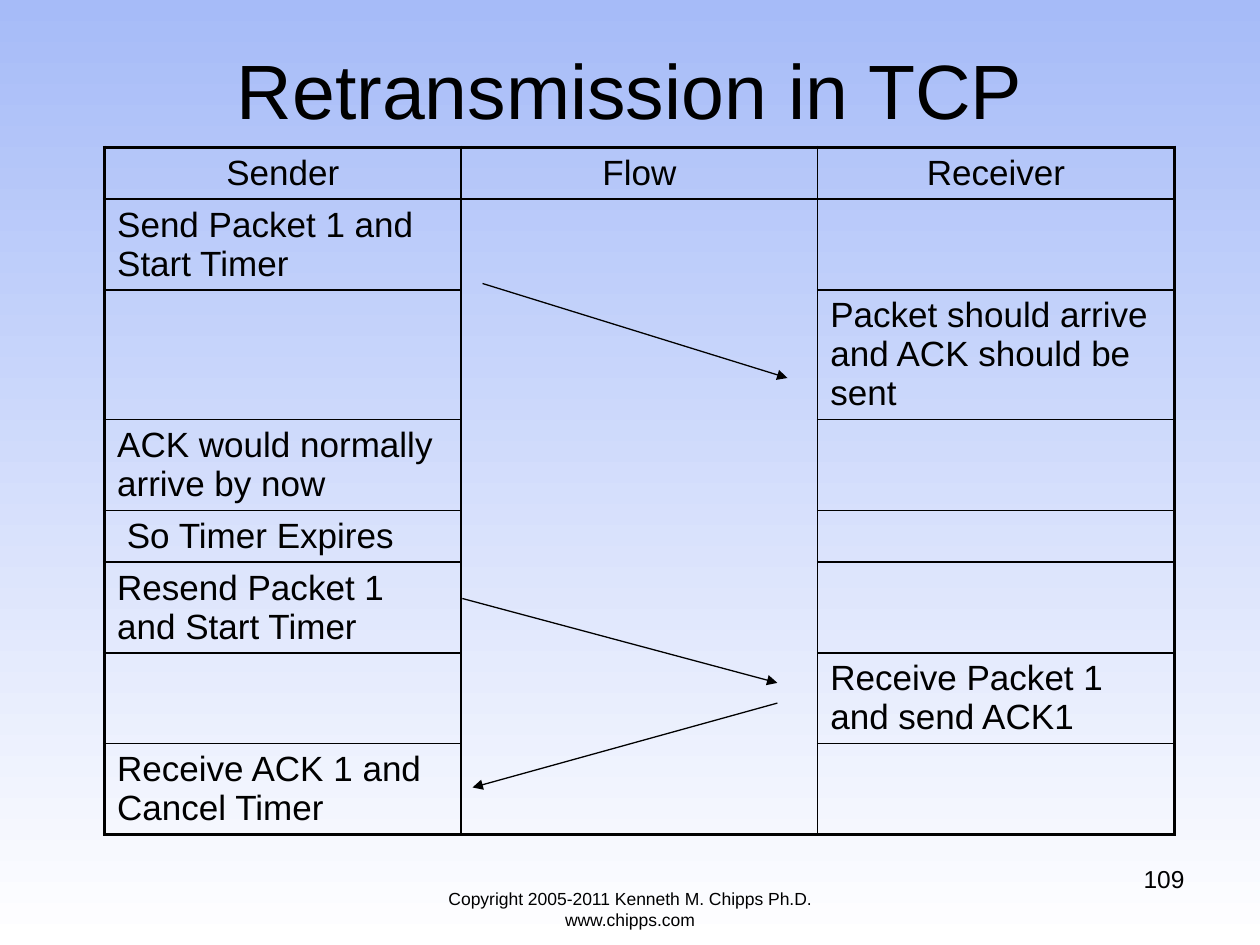
from pptx import Presentation
from pptx.dml.color import RGBColor
from pptx.enum.shapes import MSO_CONNECTOR as Connector
from pptx.enum.text import MSO_ANCHOR as Anchor, PP_ALIGN as Align
from pptx.oxml.ns import qn
from pptx.util import Inches, Pt
from lxml.etree import SubElement

BLACK = "000000"
THIN, THICK = 1, 2.25
COLUMN_WIDTH = 2.83
ROW_HEIGHTS = [0.41, 0.72, 1.03, 0.72, 0.41, 0.72, 0.72, 0.72]
ROWS = [
    ("Sender", "Flow", "Receiver"),
    ("Send Packet 1 and Start Timer", "", ""),
    ("", "", "Packet should arrive and ACK should be sent"),
    ("ACK would normally arrive by now", "", ""),
    (" So Timer Expires", "", ""),
    ("Resend Packet 1 and Start Timer", "", ""),
    ("", "", "Receive Packet 1 and send ACK1"),
    ("Receive ACK 1 and Cancel Timer", "", ""),
]
ARROWS = [  # start x, start y, end x, end y
    (3.67, 4.75, 6.17, 5.42),
    (6.17, 5.58, 3.75, 6.25),
    (3.83, 2.25, 6.25, 3),
]


def color(value):
    return RGBColor.from_string(value)


def write_text(frame, text, size, align):
    paragraph = frame.paragraphs[0]
    paragraph.alignment = align
    run = paragraph.add_run()
    run.text = text
    for name, value in {"name": "Arial", "size": Pt(size)}.items():
        setattr(run.font, name, value)
    run.font.color.rgb = color(BLACK)


def paint_background(slide):
    fill = slide.background.fill
    fill.gradient()
    fill.gradient_angle = 270
    for stop, value in zip(fill.gradient_stops, ("A6BBF8", "FFFFFF")):
        stop.color.rgb = color(value)


def set_title(slide, text):
    title = slide.shapes.title
    box = {"left": 0.5, "top": 0.08, "width": 9, "height": 1.25}
    for name, value in box.items():
        setattr(title, name, Inches(value))
    title.text_frame.vertical_anchor = Anchor.MIDDLE
    write_text(title.text_frame, text, 44, Align.CENTER)


def add_text(slide, box, text, size, align):
    frame = slide.shapes.add_textbox(*map(Inches, box)).text_frame
    frame.word_wrap = True
    write_text(frame, text, size, align)


def set_borders(cell, widths):
    properties = cell._tc.get_or_add_tcPr()
    for side, width in widths.items():
        line = SubElement(properties, qn(f"a:ln{side}"), w=str(Pt(width)))
        fill = SubElement(line, qn("a:solidFill"))
        SubElement(fill, qn("a:srgbClr"), val=BLACK)


def add_flow_table(slide):
    row_count, column_count = len(ROWS), len(ROWS[0])
    frame = slide.shapes.add_table(
        row_count, column_count, Inches(0.83), Inches(1.17),
        Inches(COLUMN_WIDTH * column_count), Inches(sum(ROW_HEIGHTS)))
    table = frame.table
    table.first_row = table.horz_banding = False
    for column in table.columns:
        column.width = Inches(COLUMN_WIDTH)
    for row, height in zip(table.rows, ROW_HEIGHTS):
        row.height = Inches(height)

    # The flow column is one tall cell below its heading
    table.cell(1, 1).merge(table.cell(row_count - 1, 1))

    for r, texts in enumerate(ROWS):
        for c, text in enumerate(texts):
            cell = table.cell(r, c)
            outer = {"L": c == 0, "R": c == column_count - 1,
                     "T": r == 0, "B": r == row_count - 1}
            if cell.is_merge_origin:
                outer["B"] = True
            set_borders(cell, {side: THICK if edge else THIN
                               for side, edge in outer.items()})
            cell.fill.background()
            if text:
                align = Align.CENTER if r == 0 else Align.LEFT
                write_text(cell.text_frame, text, 20, align)


def add_arrow(slide, points):
    arrow = slide.shapes.add_connector(Connector.STRAIGHT, *map(Inches, points))
    arrow.line.width = Pt(0.75)
    arrow.line.color.rgb = color(BLACK)
    SubElement(arrow.line._get_or_add_ln(), qn("a:tailEnd"), type="triangle")
    SubElement(arrow._element.spPr, qn("a:effectLst"))


def main():
    presentation = Presentation()
    presentation.slide_width = Inches(10)
    presentation.slide_height = Inches(7.5)
    slide = presentation.slides.add_slide(presentation.slide_layouts[5])

    paint_background(slide)
    set_title(slide, "Retransmission in TCP")
    add_flow_table(slide)

    # Footer and page number
    add_text(slide, (3, 7, 4, 0.52),
             "Copyright 2005-2011 Kenneth M. Chipps Ph.D. www.chipps.com",
             10, Align.CENTER)
    add_text(slide, (7.17, 6.81, 2.33, 0.52), "109", 14, Align.RIGHT)

    # Packets and acknowledgement
    for points in ARROWS:
        add_arrow(slide, points)

    presentation.save("out.pptx")


if __name__ == "__main__":
    main()
